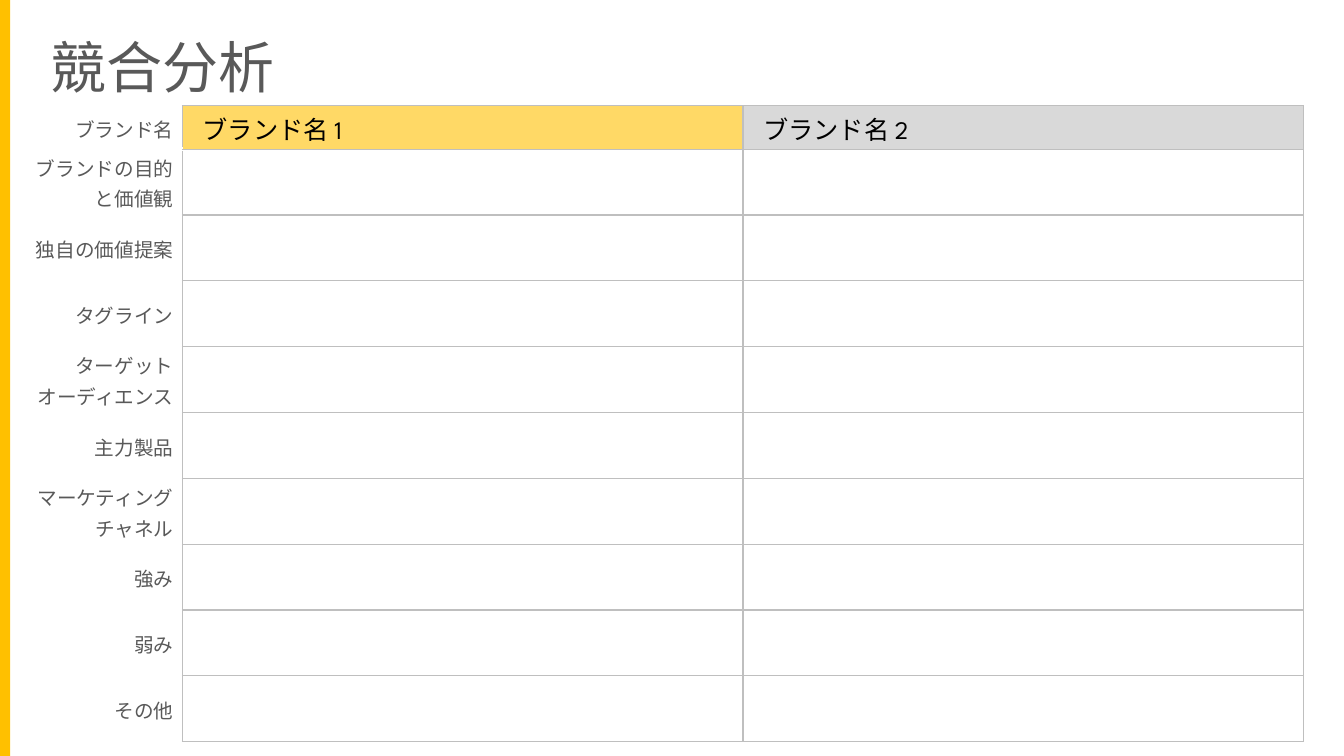
"""Builds a competitor analysis slide with a two-brand comparison table."""
from lxml.etree import SubElement
from pptx import Presentation
from pptx.dml.color import RGBColor
from pptx.enum.shapes import MSO_SHAPE
from pptx.enum.text import MSO_ANCHOR as ANCHOR, MSO_AUTO_SIZE as AUTO, PP_ALIGN as ALIGN
from pptx.oxml.ns import qn
from pptx.util import Inches, Pt

COLORS = {"accent": "FFC000", "brand1": "FFD966", "brand2": "D9D9D9",
          "line": "BFBFBF", "white": "FFFFFF", "gray": "595959", "black": "000000"}
BRANDS = [("ブランド名 1", "brand1"), ("ブランド名 2", "brand2")]
LABELS = ["ブランド名", "ブランドの目的と価値観", "独自の価値提案", "タグライン",
          "ターゲット\vオーディエンス", "主力製品", "マーケティング\vチャネル",
          "強み", "弱み", "その他"]


class SlideBuilder:
    def __init__(self, prs):
        self.font = "League Spartan"
        self.slide = prs.slides.add_slide(prs.slide_layouts[6])

    def rgb(self, name):
        return RGBColor.from_string(COLORS[name])

    def text(self, tf, text, size, color, align=ALIGN.LEFT, spacing=None):
        p = tf.paragraphs[0]
        p.text = text
        p.alignment = align
        p.line_spacing = spacing
        for r in p.runs:
            r.font.name = self.font
            r.font.size = Pt(size)
            r.font.color.rgb = self.rgb(color)

    def title(self, text, x, y, w, h):
        tf = self.slide.shapes.add_textbox(Inches(x), Inches(y), Inches(w), Inches(h)).text_frame
        tf.word_wrap = False
        tf.auto_size = AUTO.SHAPE_TO_FIT_TEXT
        self.text(tf, text, 40, "gray")

    def bar(self, x, y, w, h, color):
        sp = self.slide.shapes.add_shape(
            MSO_SHAPE.RECTANGLE, Inches(x), Inches(y), Inches(w), Inches(h))
        sp.shadow.inherit = False
        sp.fill.solid()
        sp.fill.fore_color.rgb = self.rgb(color)
        sp.line.fill.background()

    def borders(self, cell, left="line", right="line", top="line", bottom="line", bottom_width=1):
        tc_pr = cell._tc.get_or_add_tcPr()
        sides = [("L", left, 1), ("R", right, 1), ("T", top, 1), ("B", bottom, bottom_width)]
        for i, (side, color, width) in enumerate(sides):
            ln = SubElement(tc_pr, qn(f"a:ln{side}"), w=str(Pt(width)))
            SubElement(SubElement(ln, qn("a:solidFill")), qn("a:srgbClr"), val=COLORS[color])
            tc_pr.insert(i, ln)

    def cell(self, cell, text, size, color, margins, align=ALIGN.LEFT):
        cell.vertical_anchor = ANCHOR.MIDDLE
        cell.margin_left, cell.margin_right = (Inches(m) for m in margins)
        cell.margin_top = cell.margin_bottom = 0
        self.text(cell.text_frame, text, size, color, align, 1.07)

    def comparison(self, x, y, w, h, label_width, header_height):
        rows, cols = len(LABELS), len(BRANDS) + 1
        table = self.slide.shapes.add_table(
            rows, cols, Inches(x), Inches(y), Inches(w), Inches(h)).table
        table.first_row = table.horz_banding = False
        for i, col in enumerate(table.columns):
            col.width = Inches((w - label_width) / len(BRANDS) if i else label_width)
        for i, row in enumerate(table.rows):
            row.height = Inches((h - header_height) / (rows - 1) if i else header_height)
        for cell in table.iter_cells():
            cell.fill.background()
        for i, label in enumerate(LABELS):
            cell = table.cell(i, 0)
            self.cell(cell, label, 14, "gray", (0.07, 0.09), ALIGN.RIGHT)
            self.borders(cell, left="white", top="white", bottom="white",
                         bottom_width=1 if i else 3)
            for j in range(1, cols):
                self.borders(table.cell(i, j))
        for j, (brand, color) in enumerate(BRANDS, 1):
            cell = table.cell(0, j)
            self.cell(cell, brand, 18, "black", (0.2, 0.06))
            cell.fill.solid()
            cell.fill.fore_color.rgb = self.rgb(color)


def main():
    prs = Presentation()
    prs.slide_width, prs.slide_height = Inches(13.33), Inches(7.5)
    s = SlideBuilder(prs)
    s.title("競合分析", 0.4, 0.27, 2.45, 0.77)
    s.bar(0, 0, 0.1, 7.5, "accent")
    s.comparison(0.21, 1.05, 12.72, 6.31, label_width=1.6, header_height=0.43)
    prs.save("out.pptx")


if __name__ == "__main__":
    main()
